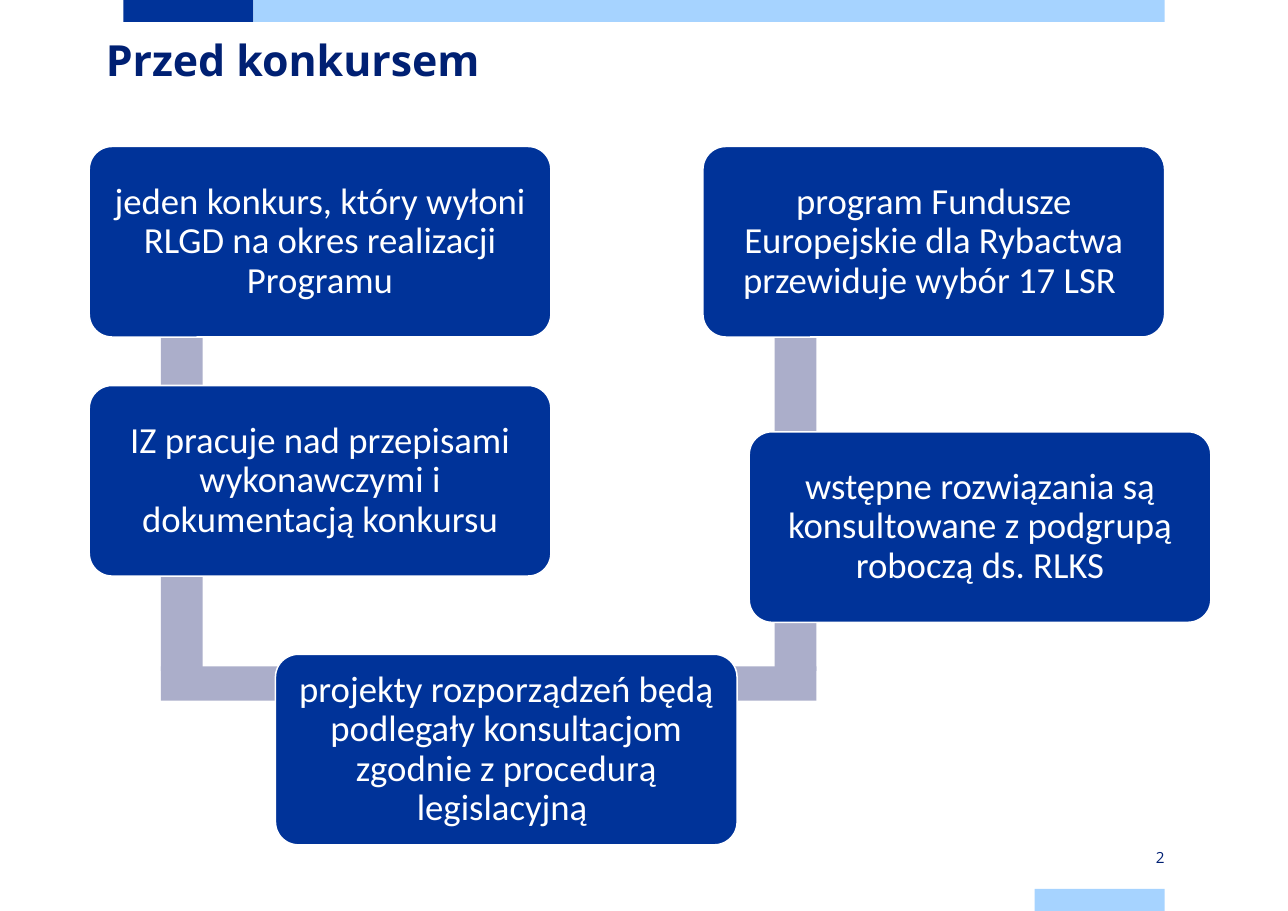
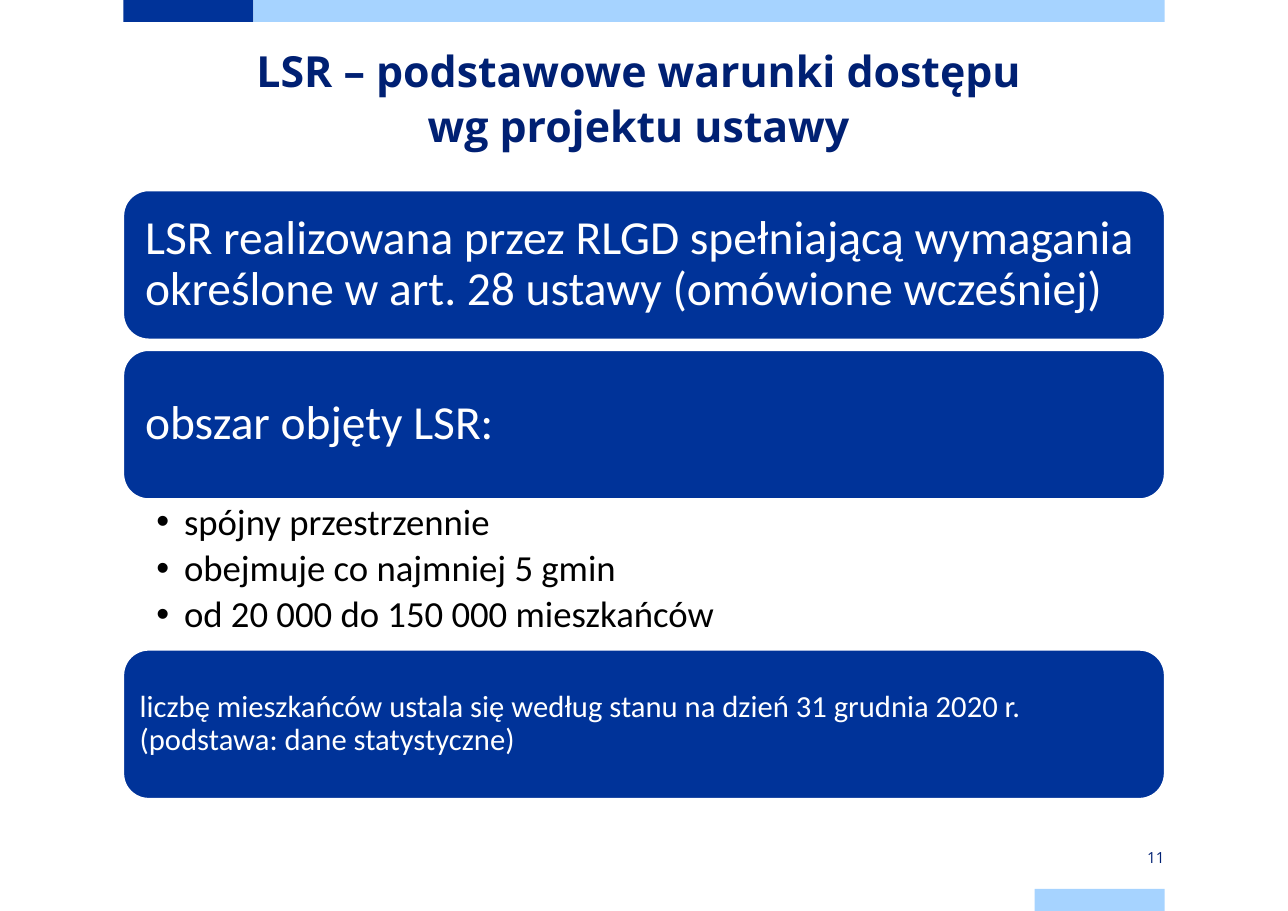
from lxml.etree import SubElement
from pptx import Presentation
from pptx.dml.color import RGBColor
from pptx.enum.shapes import MSO_SHAPE as Preset
from pptx.enum.text import MSO_ANCHOR as Anchor, MSO_AUTO_SIZE as AutoSize, PP_ALIGN as Align
from pptx.oxml.ns import qn
from pptx.util import Inches, Pt

COLORS = {"navy": "003399", "sky": "A6D3FF", "title": "002073", "bar": "ABAECA",
          "white": "FFFFFF", "black": "000000"}
TITLE_FONT, BODY_FONT = "Open Sans", "Calibri"
LEFT, WIDTH = 1.12, 9.45
TAB_WIDTH, BAND_HEIGHT = 1.18, 0.2
RIGHT = LEFT + WIDTH
SLIDE_WIDTH, SLIDE_HEIGHT = 11.69, 8.27


def color(name):
    """Return the named colour of the palette."""
    return RGBColor.from_string(COLORS[name])


def place(shape, left, top, width, height):
    """Move and size a shape in inches."""
    shape.left, shape.top = Inches(left), Inches(top)
    shape.width, shape.height = Inches(width), Inches(height)


def add_bullet(paragraph, indent):
    """Give a paragraph a round bullet with a hanging indent."""
    properties = paragraph._p.get_or_add_pPr()
    properties.set("marL", str(Inches(indent)))
    properties.set("indent", str(-Inches(indent)))
    SubElement(properties, qn("a:buFont")).set("typeface", "Arial")
    SubElement(properties, qn("a:buChar")).set("char", "•")


def write(shape, text, size, ink, font=BODY_FONT, bold=False, align=Align.LEFT,
          anchor=Anchor.MIDDLE, margins=(0, 0, 0, 0), spacing=0.9, after=0, bullet_indent=None):
    """Write one formatted paragraph for each line of text."""
    frame = shape.text_frame
    frame.word_wrap, frame.auto_size = True, AutoSize.NONE
    frame.vertical_anchor = anchor
    (frame.margin_left, frame.margin_top,
     frame.margin_right, frame.margin_bottom) = map(Inches, margins)
    for index, line in enumerate(text.split("\n")):
        paragraph = frame.add_paragraph() if index else frame.paragraphs[0]
        paragraph.alignment, paragraph.line_spacing = align, spacing
        paragraph.space_before, paragraph.space_after = Pt(0), Pt(after)
        if bullet_indent:
            add_bullet(paragraph, bullet_indent)
        run = paragraph.add_run()
        run.text = line
        run.font.name, run.font.size, run.font.bold = font, Pt(size), bold
        run.font.color.rgb = color(ink)


def add_block(slide, left, top, width, height, fill, preset=Preset.RECTANGLE):
    """Add a flat filled shape without an outline."""
    shape = slide.shapes.add_shape(preset, *map(Inches, (left, top, width, height)))
    shape.shadow.inherit = False
    shape.fill.solid()
    shape.fill.fore_color.rgb = color(fill)
    shape.line.fill.background()
    return shape


def add_card(slide, text, left, top, width, height, size, margin, corner, align=Align.LEFT):
    """Add a rounded navy card with white text."""
    card = add_block(slide, left, top, width, height, "navy", Preset.ROUNDED_RECTANGLE)
    card.adjustments[0] = corner
    card.line.color.rgb, card.line.width = color("white"), Pt(1)
    write(card, text, size, "white", align=align, margins=(margin,) * 4)


def add_master_bands(presentation, slide):
    """Draw the coloured bands and move them to the slide master."""
    bands = ((LEFT, 0, TAB_WIDTH, "navy"),
             (LEFT + TAB_WIDTH, 0, WIDTH - TAB_WIDTH, "sky"),
             (RIGHT - TAB_WIDTH, SLIDE_HEIGHT - BAND_HEIGHT, TAB_WIDTH, "sky"))
    for left, top, width, fill in bands:
        band = add_block(slide, left, top, width, BAND_HEIGHT, fill)
        presentation.slide_master.shapes.element.append(band.element)


def add_slide(presentation, layout, title, box, number, align=Align.LEFT):
    """Add a slide with its title and page number."""
    slide = presentation.slides.add_slide(presentation.slide_layouts[layout])
    place(slide.shapes.title, *box)
    write(slide.shapes.title, title, 28, "title", font=TITLE_FONT, bold=True,
          align=align, anchor=Anchor.TOP, spacing=Pt(36))
    number_box = slide.shapes.add_textbox(
        *map(Inches, (RIGHT - TAB_WIDTH, 7.68, TAB_WIDTH, BAND_HEIGHT)))
    write(number_box, number, 10, "title", font=TITLE_FONT, align=Align.RIGHT, spacing=1.0)
    return slide


def build_before_contest(presentation):
    """Build the slide with the chain of steps before the contest."""
    slide = add_slide(presentation, 5, "Przed konkursem", (0.96, 0.27, WIDTH, 0.87), "2")
    add_master_bands(presentation, slide)
    for left in (1.46, 7.03):
        for top in (1.77, 3.94):
            add_block(slide, left, top, 0.38, 2.15, "bar")
    add_block(slide, 1.46, 6.05, 5.95, 0.31, "bar")
    steps = (
        ("jeden konkurs, który wyłoni RLGD na okres realizacji Programu", 0.81, 1.33),
        ("IZ pracuje nad przepisami wykonawczymi i dokumentacją konkursu", 0.81, 3.5),
        ("projekty rozporządzeń będą podlegały konsultacjom zgodnie z procedurą legislacyjną ",
         2.5, 5.94),
        ("wstępne rozwiązania są konsultowane z podgrupą roboczą ds. RLKS", 6.8, 3.92),
        ("program Fundusze Europejskie dla Rybactwa przewiduje wybór 17 LSR ", 6.38, 1.33),
    )
    for text, left, top in steps:
        add_card(slide, text, left, top, 4.19, 1.73, 24, 0.08, 0.12, Align.CENTER)


def build_access_conditions(presentation):
    """Build the slide with the basic access conditions."""
    slide = add_slide(presentation, 1, "LSR – podstawowe warunki dostępu \nwg projektu ustawy ",
                      (LEFT, 0.37, WIDTH, 1.02), "11", Align.CENTER)
    conditions = (
        ("LSR realizowana przez RLGD spełniającą wymagania "
         "określone w art. 28 ustawy (omówione wcześniej)", 1.73, 31, 0.13),
        ("obszar objęty LSR:", 3.18, 31, 0.13),
        ("liczbę mieszkańców ustala się według stanu na dzień 31 grudnia 2020 r. "
         "(podstawa: dane statystyczne)", 5.9, 20, 0.08),
    )
    for text, top, size, margin in conditions:
        add_card(slide, text, LEFT, top, WIDTH, 1.35, size, margin, 0.17)
    area_list = slide.placeholders[1]
    place(area_list, LEFT, 4.53, WIDTH, 1.37)
    write(area_list, "spójny przestrzennie\nobejmuje co najmniej 5 gmin\n"
          "od 20 000 do 150 000 mieszkańców", 24, "black", anchor=Anchor.TOP,
          margins=(0.3, 0.04, 0.24, 0.04), after=4.4, bullet_indent=0.25)


def main():
    """Build and save the presentation."""
    presentation = Presentation()
    presentation.slide_width = Inches(SLIDE_WIDTH)
    presentation.slide_height = Inches(SLIDE_HEIGHT)
    build_before_contest(presentation)
    build_access_conditions(presentation)
    presentation.save("out.pptx")


if __name__ == "__main__":
    main()
